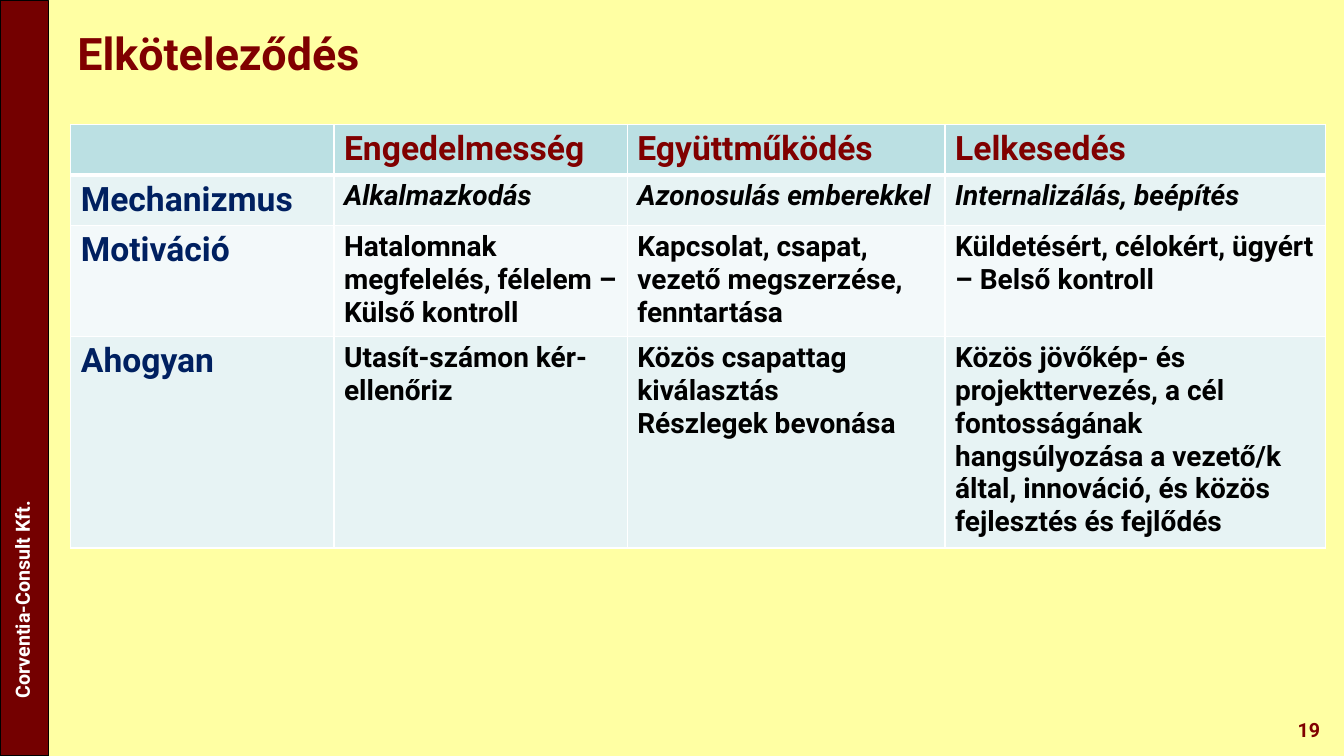
"""Build the commitment slide: title, side bar and comparison table."""
from lxml import etree
from pptx import Presentation
from pptx import util as u
from pptx.dml.color import RGBColor
from pptx.enum import shapes, text
from pptx.oxml import ns

COMPANY = "Corventia-Consult Kft."
TITLE = "Elköteleződés"
NUMBER = "19"
HEADER = ["", "Engedelmesség", "Együttműködés", "Lelkesedés"]
ROWS = [
    ["Mechanizmus", "Alkalmazkodás", "Azonosulás emberekkel", "Internalizálás, beépítés"],
    ["Motiváció", "Hatalomnak megfelelés, félelem – Külső kontroll",
     "Kapcsolat, csapat, vezető megszerzése, fenntartása",
     "Küldetésért, célokért, ügyért – Belső kontroll"],
    ["Ahogyan", "Utasít-számon kér- ellenőriz",
     "Közös csapattag kiválasztás\nRészlegek bevonása",
     "Közös jövőkép- és projekttervezés, a cél fontosságának hangsúlyozása "
     "a vezető/k által, innováció, és közös fejlesztés és fejlődés"],
]
COL_WIDTHS = [188, 209.5, 227, 272]
ROW_HEIGHTS = [35.3, 35.3, 77.5, 147.8]

FONT = "Roboto"
CREAM = RGBColor(0xFF, 0xFF, 0xA3)
BAR = RGBColor(0x74, 0x00, 0x00)
MAROON = RGBColor(0x80, 0x00, 0x00)
NAVY = RGBColor(0x00, 0x20, 0x60)
BLACK = RGBColor(0x00, 0x00, 0x00)
WHITE = RGBColor(0xFF, 0xFF, 0xFF)
TEAL = RGBColor(0xBB, 0xE0, 0xE3)
BANDS = [RGBColor(0xE7, 0xF3, 0xF4), RGBColor(0xF3, 0xF9, 0xFA)]
SLIDE_W, SLIDE_H = 960, 540
BAR_W = 34.6


def write(tf, content, size, color, italic=False, align=text.PP_ALIGN.LEFT):
    tf.word_wrap = True
    for i, line in enumerate(content.split("\n")):
        p = tf.add_paragraph() if i else tf.paragraphs[0]
        p.alignment = align
        r = p.add_run()
        r.text = line
        r.font.name, r.font.size = FONT, u.Pt(size)
        r.font.bold, r.font.italic = True, italic
        r.font.color.rgb = color


def add_box(s, left, top, width, height, fill):
    sp = s.shapes.add_shape(shapes.MSO_SHAPE.RECTANGLE, u.Pt(left), u.Pt(top),
                            u.Pt(width), u.Pt(height))
    sp.shadow.inherit = False
    sp.fill.solid()
    sp.fill.fore_color.rgb = fill
    return sp


def add_text(s, left, top, width, height, content, size, color):
    sp = s.shapes.add_textbox(u.Pt(left), u.Pt(top), u.Pt(width), u.Pt(height))
    write(sp.text_frame, content, size, color)
    return sp


def set_borders(cell, widths):
    pr = cell._tc.get_or_add_tcPr()
    for i, (side, width) in enumerate(widths.items()):
        ln = etree.Element(ns.qn(f"a:ln{side}"), w=str(u.Pt(width)))
        fill = etree.SubElement(ln, ns.qn("a:solidFill"))
        etree.SubElement(fill, ns.qn("a:srgbClr"), val=str(WHITE))
        pr.insert(i, ln)


def add_table(s):
    rows = [HEADER] + ROWS
    table = s.shapes.add_table(len(rows), len(HEADER), u.Pt(50.6), u.Pt(88.8),
                               u.Pt(sum(COL_WIDTHS)), u.Pt(sum(ROW_HEIGHTS))).table
    table.first_row = table.horz_banding = False
    for column, width in zip(table.columns, COL_WIDTHS):
        column.width = u.Pt(width)
    for i, row in enumerate(rows):
        table.rows[i].height = u.Pt(ROW_HEIGHTS[i])
        for j, content in enumerate(row):
            cell = table.cell(i, j)
            cell.fill.solid()
            cell.fill.fore_color.rgb = BANDS[(i - 1) % 2] if i else TEAL
            set_borders(cell, {"L": 1, "R": 1, "T": 3 if i == 1 else 1, "B": 1 if i else 3})
            if not content:
                continue
            if i == 0 or j == 0:
                write(cell.text_frame, content, 24, NAVY if i else MAROON)
            else:
                write(cell.text_frame, content, 20, BLACK, italic=i == 1)


def main():
    prs = Presentation()
    prs.slide_width, prs.slide_height = u.Pt(SLIDE_W), u.Pt(SLIDE_H)
    s = prs.slides.add_slide(prs.slide_layouts[6])
    s.background.fill.solid()
    s.background.fill.fore_color.rgb = CREAM

    bar = add_box(s, (BAR_W - SLIDE_H) / 2, (SLIDE_H - BAR_W) / 2, SLIDE_H, BAR_W, BAR)
    bar.rotation = 270
    bar.line.color.rgb = BLACK
    bar.line.width = u.Pt(0.75)

    company = add_text(s, -87.8, 390.2, 207.4, 24.2, COMPANY, 14, WHITE)
    company.rotation = 270

    title = add_text(s, 48.2, 21.6, 651, 32.4, TITLE, 32, MAROON)
    title.text_frame.vertical_anchor = text.MSO_ANCHOR.MIDDLE

    number = add_box(s, 920.2, 512.6, 29.5, 18, CREAM)
    number.line.fill.background()
    tf = number.text_frame
    tf.margin_left = tf.margin_right = tf.margin_top = tf.margin_bottom = 0
    tf.vertical_anchor = text.MSO_ANCHOR.TOP
    write(tf, NUMBER, 14, MAROON, align=text.PP_ALIGN.CENTER)

    add_table(s)
    prs.save("out.pptx")


if __name__ == "__main__":
    main()
